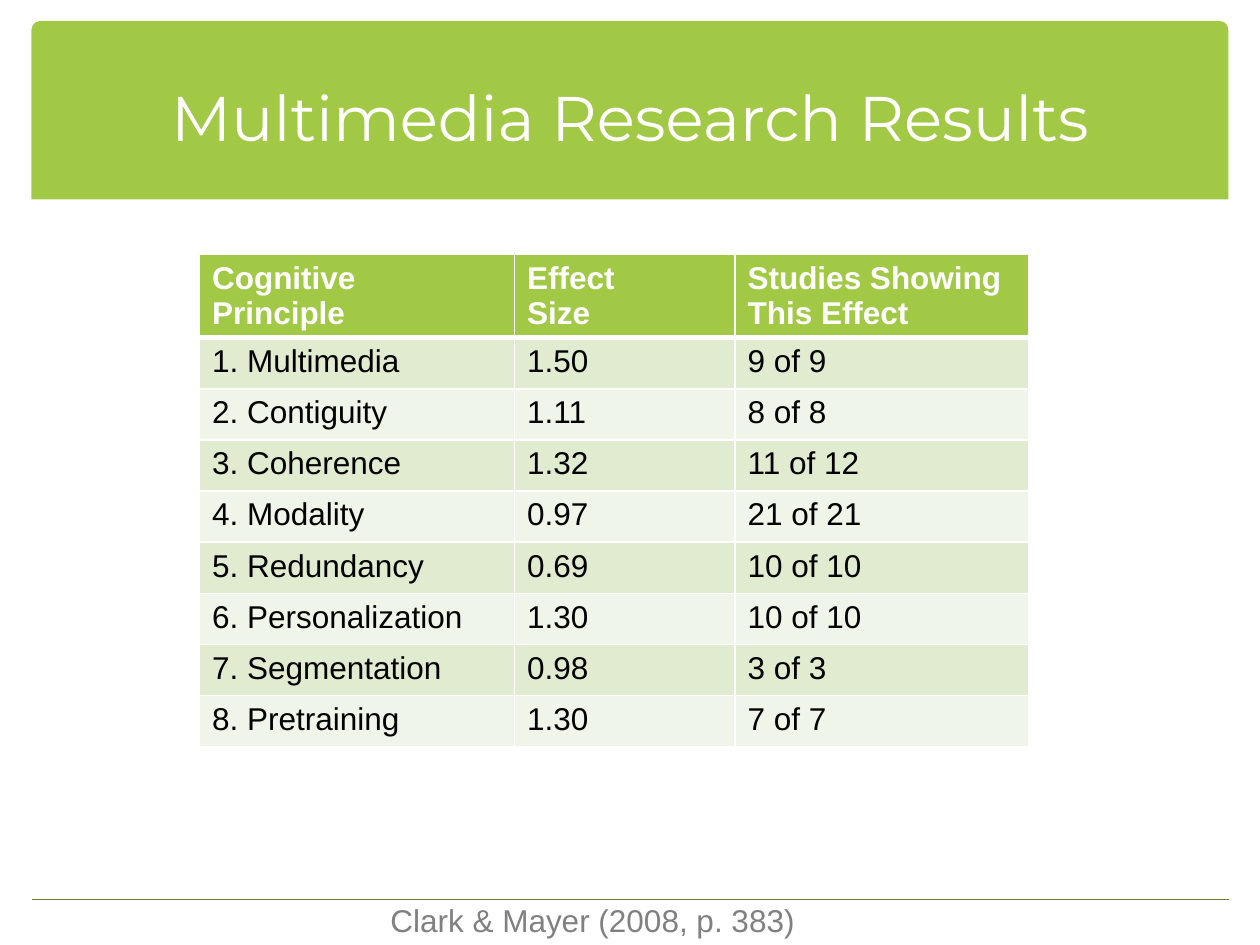
from dataclasses import dataclass

from lxml import etree
from pptx import Presentation
from pptx.dml.color import RGBColor
from pptx.enum.shapes import MSO_CONNECTOR, MSO_SHAPE
from pptx.enum.text import MSO_ANCHOR, PP_ALIGN
from pptx.oxml.ns import qn
from pptx.util import Pt

STRAIGHT = MSO_CONNECTOR.STRAIGHT
ROUNDED_TOP = MSO_SHAPE.ROUND_2_SAME_RECTANGLE
MIDDLE = MSO_ANCHOR.MIDDLE
CENTER = PP_ALIGN.CENTER

GREEN = RGBColor(0xA2, 0xC9, 0x46)
OLIVE = RGBColor(0x6B, 0x7F, 0x3A)
BAND_DARK = RGBColor(0xE0, 0xEB, 0xCF)
BAND_LIGHT = RGBColor(0xF0, 0xF5, 0xE9)
WHITE = RGBColor(0xFF, 0xFF, 0xFF)
BLACK = RGBColor(0, 0, 0)
GRAY = RGBColor(0x80, 0x80, 0x80)

COLUMN_WIDTHS = (180, 126, 168)
HEADER_HEIGHT = 47
ROW_HEIGHT = 29.2
HEADINGS = ("Cognitive\nPrinciple", "Effect \nSize", "Studies Showing This Effect")


@dataclass(frozen=True)
class Finding:
    principle: str
    effect_size: str
    studies: str


@dataclass(frozen=True)
class TextStyle:
    size: float
    color: RGBColor
    font: str = "Arial"
    bold: bool = False


@dataclass(frozen=True)
class CellStyle:
    text: TextStyle
    fill: RGBColor
    top_border: float = 1
    bottom_border: float = 1


FINDINGS = (
    Finding("1. Multimedia", "1.50", "9 of 9"),
    Finding("2. Contiguity", "1.11", "8 of 8"),
    Finding("3. Coherence", "1.32", "11 of 12"),
    Finding("4. Modality", "0.97", "21 of 21"),
    Finding("5. Redundancy", "0.69", "10 of 10"),
    Finding("6. Personalization", "1.30", "10 of 10"),
    Finding("7. Segmentation", "0.98", "3 of 3"),
    Finding("8. Pretraining", "1.30", "7 of 7"),
)


def write(paragraph, text: str, style: TextStyle) -> None:
    for index, line in enumerate(text.split("\n")):
        if index:
            paragraph.add_line_break()
        run = paragraph.add_run()
        run.text = line
        run.font.name = style.font
        run.font.size = Pt(style.size)
        run.font.bold = style.bold
        run.font.color.rgb = style.color


def set_borders(cell, style: CellStyle) -> None:
    properties = cell._tc.get_or_add_tcPr()
    widths = {"a:lnL": 1, "a:lnR": 1,
              "a:lnT": style.top_border, "a:lnB": style.bottom_border}
    # Borders come before the fill in the cell properties
    for position, (tag, width) in enumerate(widths.items()):
        border = etree.Element(qn(tag), w=str(Pt(width)))
        fill = etree.SubElement(border, qn("a:solidFill"))
        etree.SubElement(fill, qn("a:srgbClr"), val=str(WHITE))
        properties.insert(position, border)


def fill_row(table, row: int, texts: tuple[str, ...], style: CellStyle) -> None:
    for column, text in enumerate(texts):
        cell = table.cell(row, column)
        cell.fill.solid()
        cell.fill.fore_color.rgb = style.fill
        set_borders(cell, style)
        write(cell.text_frame.paragraphs[0], text, style.text)


def add_title(slide) -> None:
    title = slide.shapes.title
    title.left, title.top, title.width, title.height = Pt(24), Pt(21.6), Pt(672), Pt(90)
    title.text_frame.vertical_anchor = MIDDLE
    heading = title.text_frame.paragraphs[0]
    heading.alignment = CENTER
    write(heading, "Multimedia Research Results", TextStyle(36, WHITE, "Montserrat"))

    # Banner, placed behind the title
    banner = slide.shapes.add_shape(ROUNDED_TOP, Pt(18), Pt(12), Pt(684), Pt(102))
    banner.adjustments[0] = 0.05
    banner.adjustments[1] = 0
    banner.shadow.inherit = False
    banner.fill.solid()
    banner.fill.fore_color.rgb = GREEN
    banner.line.fill.background()
    title.element.addprevious(banner.element)


def add_results(slide) -> None:
    total_height = HEADER_HEIGHT + ROW_HEIGHT * len(FINDINGS)
    table = slide.shapes.add_table(
        len(FINDINGS) + 1, len(COLUMN_WIDTHS), Pt(114), Pt(145.5),
        Pt(sum(COLUMN_WIDTHS)), Pt(total_height)).table
    for column, width in zip(table.columns, COLUMN_WIDTHS):
        column.width = Pt(width)
    for row in table.rows:
        row.height = Pt(ROW_HEIGHT)
    table.rows[0].height = Pt(HEADER_HEIGHT)

    header_text = TextStyle(18, WHITE, bold=True)
    fill_row(table, 0, HEADINGS, CellStyle(header_text, GREEN, bottom_border=3))
    for row, finding in enumerate(FINDINGS, start=1):
        style = CellStyle(TextStyle(18, BLACK), BAND_DARK if row % 2 else BAND_LIGHT,
                          top_border=3 if row == 1 else 1)
        fill_row(table, row, (finding.principle, finding.effect_size, finding.studies), style)


def add_citation(slide) -> None:
    rule = slide.shapes.add_connector(STRAIGHT, Pt(18), Pt(514), Pt(702), Pt(514))
    rule.line.color.rgb = OLIVE
    rule.line.width = Pt(1)
    etree.SubElement(rule.element.spPr, qn("a:effectLst"))

    citation = slide.shapes.add_textbox(Pt(216), Pt(511.2), Pt(252), Pt(29))
    citation.text_frame.word_wrap = True
    write(citation.text_frame.paragraphs[0], "Clark & Mayer (2008, p. 383)", TextStyle(18, GRAY))


def main() -> None:
    presentation = Presentation()
    presentation.slide_width, presentation.slide_height = Pt(720), Pt(540)
    slide = presentation.slides.add_slide(presentation.slide_layouts[5])
    add_title(slide)
    add_results(slide)
    add_citation(slide)
    presentation.save("out.pptx")


if __name__ == "__main__":
    main()
